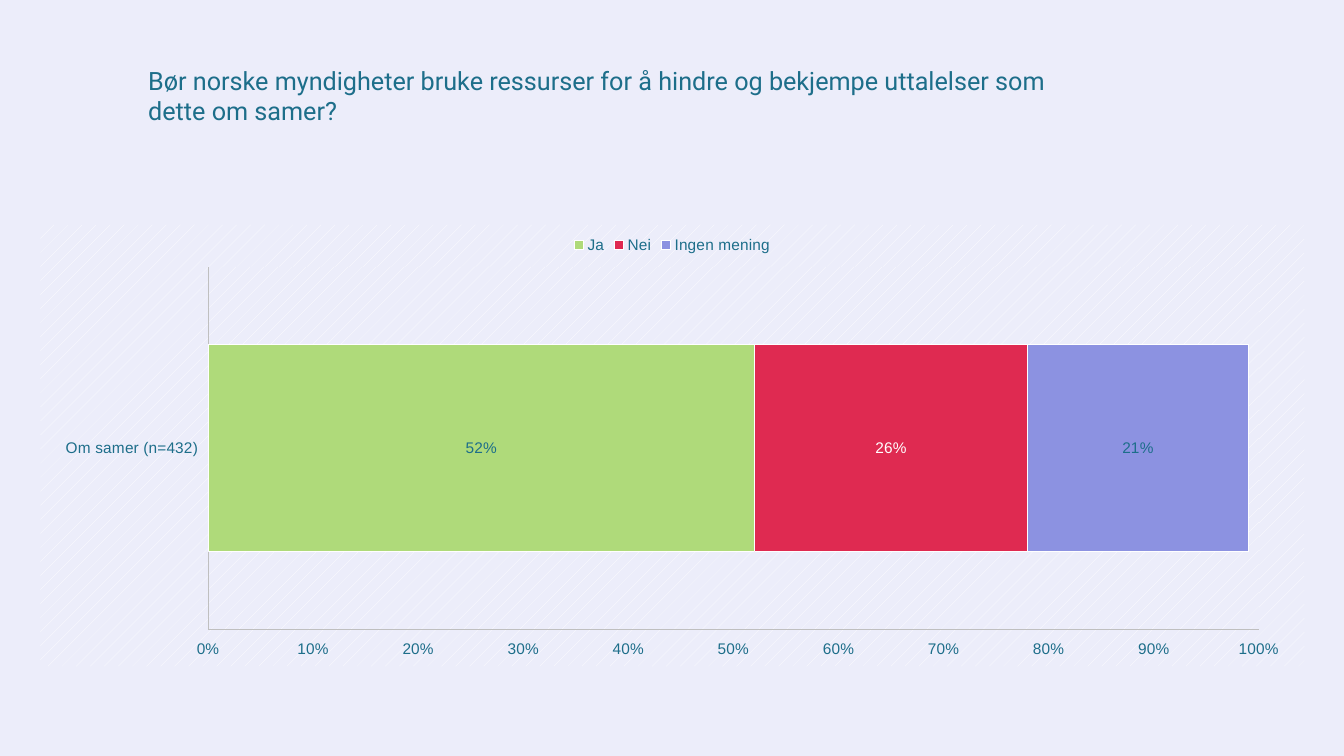
"""Build a slide with a survey question and a stacked bar of its answers."""
import pptx
import pptx.chart.data
import pptx.dml.color
import pptx.enum.chart
import pptx.enum.text
import pptx.oxml
import pptx.util

Pt = pptx.util.Pt
COLORS = {
    "background": "ECEDFA", "text": "1D6E8A", "white": "FFFFFF", "axis": "BFBFBF",
    "yes": "AFDA7A", "no": "DF2A51", "no_opinion": "8C92E1",
}
QUESTION = ("Bør norske myndigheter bruke ressurser for å hindre og bekjempe "
            "uttalelser som dette om samer?")
ANSWERS = [
    ("Ja", 52, "yes", "text"),
    ("Nei", 26, "no", "white"),
    ("Ingen mening", 21, "no_opinion", "text"),
]
PERCENT = "General\\%"


def rgb(name):
    return pptx.dml.color.RGBColor.from_string(COLORS[name])


def set_values(target, **values):
    for name, value in values.items():
        setattr(target, name, value)


def set_fill(fill, color):
    fill.solid()
    fill.fore_color.rgb = rgb(color)


def set_font(font, color, **values):
    set_values(font, **values)
    font.color.rgb = rgb(color)


def set_line(line, color):
    line.width = Pt(0.75)
    line.color.rgb = rgb(color)


def pattern_properties():
    namespaces = pptx.oxml.ns.nsdecls("c", "a")
    return pptx.oxml.parse_xml(
        f'<c:spPr {namespaces}><a:pattFill prst="pct5">'
        f'<a:fgClr><a:srgbClr val="{COLORS["white"]}"/></a:fgClr>'
        f'<a:bgClr><a:srgbClr val="{COLORS["background"]}"/></a:bgClr>'
        '</a:pattFill><a:ln><a:noFill/></a:ln></c:spPr>')


def add_title(slide):
    title = slide.shapes.title
    set_values(title, left=Pt(98.64), top=Pt(43.2), width=Pt(666), height=Pt(51.12))
    frame = title.text_frame
    frame.text = QUESTION
    set_values(frame, word_wrap=True, auto_size=pptx.enum.text.MSO_AUTO_SIZE.NONE,
               vertical_anchor=pptx.enum.text.MSO_ANCHOR.TOP)
    paragraph = frame.paragraphs[0]
    paragraph.alignment = pptx.enum.text.PP_ALIGN.LEFT
    set_font(paragraph.runs[0].font, "text", name="Roboto", size=Pt(18))


def format_axis(axis):
    set_values(axis, has_major_gridlines=False,
               major_tick_mark=pptx.enum.chart.XL_TICK_MARK.NONE,
               minor_tick_mark=pptx.enum.chart.XL_TICK_MARK.NONE,
               tick_label_position=pptx.enum.chart.XL_TICK_LABEL_POSITION.LOW)
    set_line(axis.format.line, "axis")


def format_series(series, fill_color, label_color):
    set_fill(series.format.fill, fill_color)
    set_line(series.format.line, "white")
    labels = series.data_labels
    set_values(labels, show_value=True, number_format=PERCENT,
               number_format_is_linked=False,
               position=pptx.enum.chart.XL_LABEL_POSITION.CENTER)
    set_font(labels.font, label_color, name="Arial", size=Pt(11))


def add_answer_chart(slide):
    data = pptx.chart.data.CategoryChartData(number_format=PERCENT)
    data.categories = ["Om samer (n=432)"]
    for name, value, _, _ in ANSWERS:
        data.add_series(name, [value])
    chart = slide.shapes.add_chart(
        pptx.enum.chart.XL_CHART_TYPE.BAR_STACKED,
        Pt(28.8), Pt(160.56), Pt(902.88), Pt(315.36), data).chart
    set_values(chart, has_title=False, has_legend=True)
    set_font(chart.font, "text", name="Arial", size=Pt(11))
    set_values(chart.legend, include_in_layout=False,
               position=pptx.enum.chart.XL_LEGEND_POSITION.TOP)
    for axis in (chart.category_axis, chart.value_axis):
        format_axis(axis)
    set_values(chart.value_axis, minimum_scale=0, maximum_scale=100, major_unit=10)
    set_values(chart.value_axis.tick_labels, number_format=PERCENT,
               number_format_is_linked=False)
    plot = chart.plots[0]
    set_values(plot, gap_width=75, overlap=100, vary_by_categories=False)
    for series, (_, _, fill_color, label_color) in zip(plot.series, ANSWERS):
        format_series(series, fill_color, label_color)
    chart_element = chart.element.find(pptx.oxml.ns.qn("c:chart"))
    chart_element.addnext(pattern_properties())
    chart_element.find(pptx.oxml.ns.qn("c:plotArea")).append(pattern_properties())


def main():
    presentation = pptx.Presentation()
    set_values(presentation, slide_width=Pt(960), slide_height=Pt(540))
    slide = presentation.slides.add_slide(presentation.slide_layouts[5])
    set_fill(slide.background.fill, "background")
    add_title(slide)
    add_answer_chart(slide)
    presentation.save("out.pptx")


if __name__ == "__main__":
    main()
